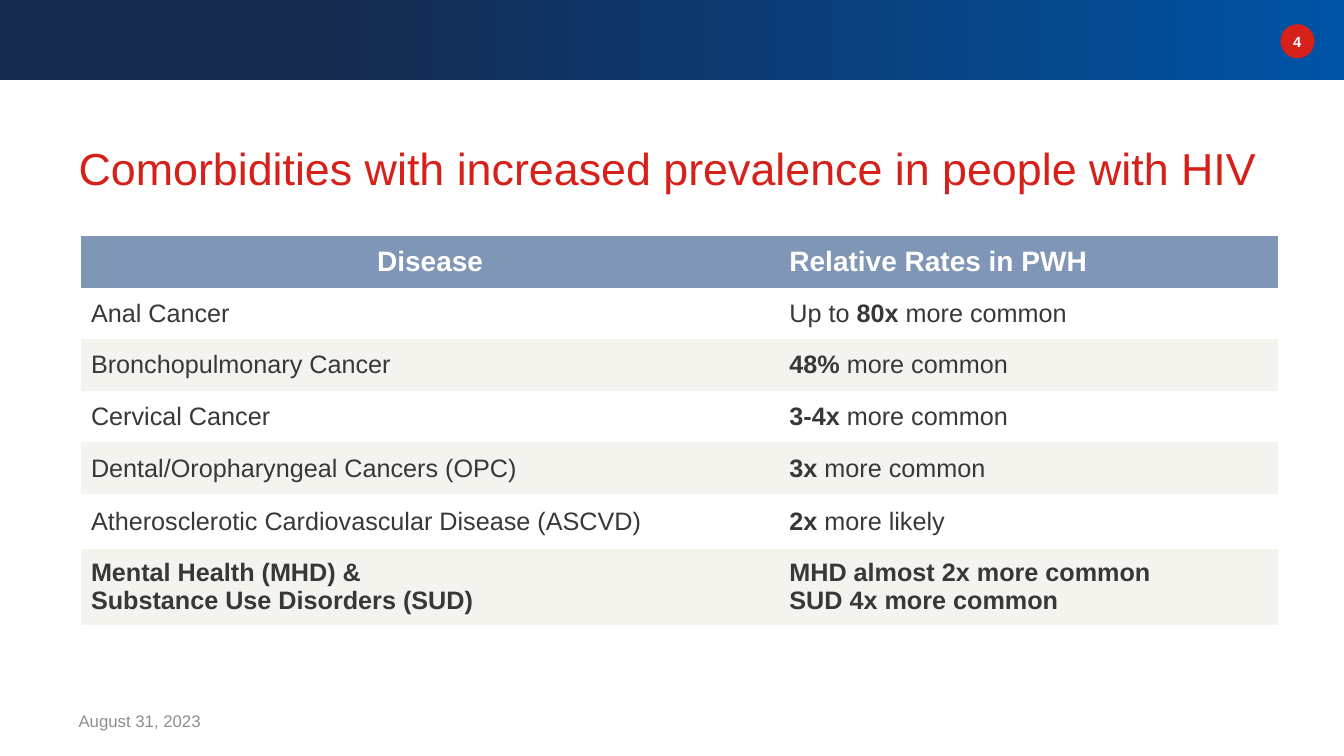
"""Builds the slide on comorbidities with increased prevalence in people with HIV."""
from dataclasses import dataclass

from pptx import Presentation
from pptx.dml.color import RGBColor
from pptx.enum.shapes import MSO_SHAPE as Preset
from pptx.enum.text import MSO_ANCHOR as Anchor, PP_ALIGN as Align
from pptx.oxml.ns import qn
from pptx.util import Cm, Pt

FONT = "Arial"
NAVY = RGBColor(0x15, 0x29, 0x4E)
BLUE = RGBColor(0x00, 0x54, 0xA6)
RED = RGBColor(0xD6, 0x20, 0x1A)
WHITE = RGBColor(0xFF, 0xFF, 0xFF)
SLATE = RGBColor(0x80, 0x96, 0xB6)
CREAM = RGBColor(0xF5, 0xF3, 0xED)
CHARCOAL = RGBColor(0x38, 0x38, 0x38)
GREY = RGBColor(0x8D, 0x8D, 0x8D)
NO_GRID_STYLE = "{2D5ABB26-0587-4C30-8999-92F81FD0307C}"
WIDTH, HEIGHT = 33.87, 19.05


@dataclass(frozen=True)
class Label:
    text: str
    left: float
    top: float
    width: float
    height: float
    size: float
    color: RGBColor
    bold: bool = False
    align: Align = Align.LEFT


@dataclass(frozen=True)
class Comorbidity:
    disease: str
    lead: str
    rate: str
    rest: str
    height: float = 1.3


LABELS = [
    Label("4", 32.13, 0.69, 1.12, 0.71, 10.5, WHITE, True, Align.CENTER),
    Label("Comorbidities with increased prevalence in people with HIV",
          1.73, 3.33, 30.48, 1.8, 32, RED),
    Label("August 31, 2023", 1.73, 17.65, 7.62, 1.02, 12, GREY),
]
COMORBIDITIES = [
    Comorbidity("Anal Cancer", "Up to ", "80x", " more common"),
    Comorbidity("Bronchopulmonary Cancer", "", "48%", " more common"),
    Comorbidity("Cervical Cancer", "", "3-4x", " more common"),
    Comorbidity("Dental/Oropharyngeal Cancers (OPC)", "", "3x", " more common"),
    Comorbidity("Atherosclerotic Cardiovascular Disease (ASCVD)", "", "2x", " more likely", 1.38),
]
MENTAL_HEALTH = (
    "Mental Health (MHD) &\nSubstance Use Disorders (SUD)",
    "MHD almost 2x more common\nSUD 4x more common",
)
HEADINGS = ("Disease", "Relative Rates in PWH")
COLUMN_WIDTHS = (17.6, 12.57)
HEADING_HEIGHT, MENTAL_HEALTH_HEIGHT = 1.3, 1.93


def style(paragraph, size: float, color: RGBColor, bold: bool | None = None) -> None:
    font = paragraph.font
    font.name, font.size, font.bold = FONT, Pt(size), bold
    font.color.rgb = color


def add_label(slide, label: Label) -> None:
    box = slide.shapes.add_textbox(
        Cm(label.left), Cm(label.top), Cm(label.width), Cm(label.height))
    frame = box.text_frame
    frame.word_wrap = True
    frame.vertical_anchor = Anchor.MIDDLE
    frame.text = label.text
    paragraph = frame.paragraphs[0]
    paragraph.alignment = label.align
    style(paragraph, label.size, label.color, label.bold)


def add_banner(slide) -> None:
    banner = slide.shapes.add_shape(Preset.RECTANGLE, 0, 0, Cm(WIDTH), Cm(2.02))
    banner.shadow.inherit = False
    banner.line.fill.background()
    banner.fill.gradient()
    banner.fill.gradient_angle = 0
    for stop, position, color in zip(banner.fill.gradient_stops, (0.23, 1), (NAVY, BLUE)):
        stop.position = position
        stop.color.rgb = color
    badge = slide.shapes.add_shape(Preset.OVAL, Cm(32.27), Cm(0.61), Cm(0.86), Cm(0.86))
    badge.shadow.inherit = False
    badge.line.fill.background()
    badge.fill.solid()
    badge.fill.fore_color.rgb = RED


def fill_cell(cell, text: str, fill: RGBColor, size: float, color: RGBColor, bold: bool) -> None:
    cell.text = text
    cell.vertical_anchor = Anchor.MIDDLE
    cell.fill.solid()
    cell.fill.fore_color.rgb = fill
    for paragraph in cell.text_frame.paragraphs:
        style(paragraph, size, color, bold)


def fill_rate(cell, entry: Comorbidity, fill: RGBColor) -> None:
    fill_cell(cell, "", fill, 18, CHARCOAL, False)
    paragraph = cell.text_frame.paragraphs[0]
    for text in filter(None, (entry.lead, entry.rate, entry.rest)):
        run = paragraph.add_run()
        run.text = text
        run.font.bold = text == entry.rate


def add_rates_table(slide) -> None:
    heights = [HEADING_HEIGHT, *(entry.height for entry in COMORBIDITIES), MENTAL_HEALTH_HEIGHT]
    rates = slide.shapes.add_table(
        len(heights), len(HEADINGS), Cm(2.04), Cm(5.95),
        Cm(sum(COLUMN_WIDTHS)), Cm(sum(heights))).table
    rates._tbl.tblPr.find(qn("a:tableStyleId")).text = NO_GRID_STYLE
    rates.horz_banding = False
    for column, width in zip(rates.columns, COLUMN_WIDTHS):
        column.width = Cm(width)
    for row, height in zip(rates.rows, heights):
        row.height = Cm(height)

    for column, heading in enumerate(HEADINGS):
        fill_cell(rates.cell(0, column), heading, SLATE, 20, WHITE, True)
    rates.cell(0, 0).text_frame.paragraphs[0].alignment = Align.CENTER
    for row, entry in enumerate(COMORBIDITIES, start=1):
        band = WHITE if row % 2 else CREAM
        fill_cell(rates.cell(row, 0), entry.disease, band, 18, CHARCOAL, False)
        fill_rate(rates.cell(row, 1), entry, band)
    for column, text in enumerate(MENTAL_HEALTH):
        fill_cell(rates.cell(len(heights) - 1, column), text, CREAM, 18, CHARCOAL, True)


def main() -> None:
    deck = Presentation()
    deck.slide_width, deck.slide_height = Cm(WIDTH), Cm(HEIGHT)
    slide = deck.slides.add_slide(deck.slide_layouts[6])
    add_banner(slide)
    for label in LABELS:
        add_label(slide, label)
    add_rates_table(slide)
    deck.save("out.pptx")


if __name__ == "__main__":
    main()
